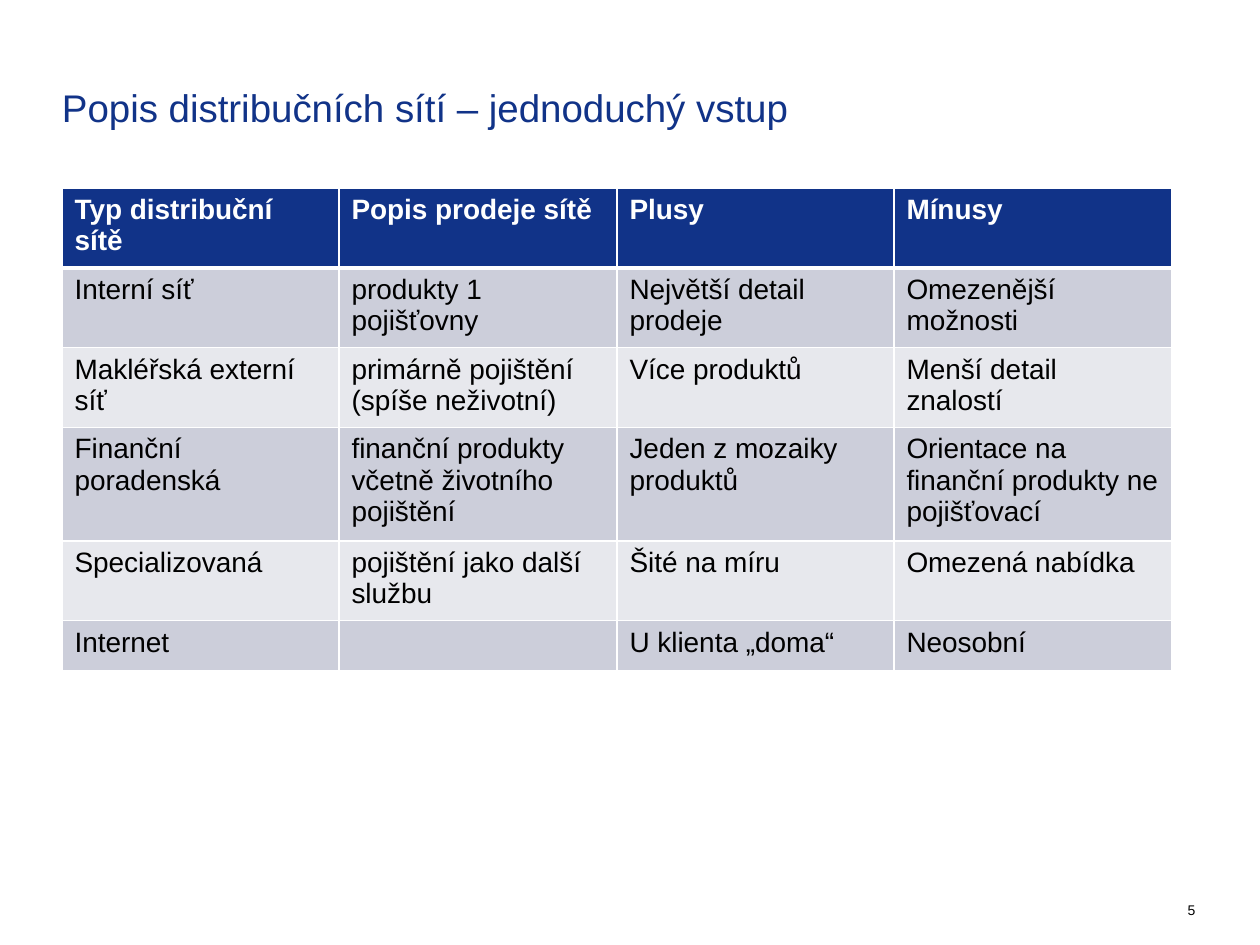
from dataclasses import dataclass

from lxml.etree import SubElement
from pptx import Presentation
from pptx.dml.color import RGBColor
from pptx.enum.text import PP_ALIGN
from pptx.oxml.ns import qn
from pptx.util import Pt

EMU_PER_PX = 914400 // 126
NAVY, WHITE, BLACK = "113388", "FFFFFF", "000000"
BANDS = ("CCCEDA", "E7E8ED")


@dataclass
class Area:
    left: int
    top: int
    width: int
    height: int

    def emu(self) -> list[int]:
        return [px(n) for n in (self.left, self.top, self.width, self.height)]


@dataclass
class Row:
    height: int
    texts: tuple[str, ...]


TITLE_AREA = Area(62, 84, 935, 47)
NUMBER_AREA = Area(1144, 895, 64, 53)
TABLE_AREA = Area(62, 188, 1110, 456)
COLUMN_WIDTHS = (277, 278, 277, 278)

ROWS = (
    Row(75, ("Typ distribuční sítě", "Popis prodeje sítě", "Plusy", "Mínusy")),
    Row(75, ("Interní síť", "produkty 1 pojišťovny",
             "Největší detail prodeje", "Omezenější možnosti")),
    Row(75, ("Makléřská externí síť", "primárně pojištění (spíše neživotní)",
             "Více produktů", "Menší detail znalostí")),
    Row(106, ("Finanční poradenská", "finanční produkty včetně životního pojištění",
              "Jeden z mozaiky produktů",
              "Orientace na finanční produkty ne pojišťovací")),
    Row(75, ("Specializovaná", "pojištění jako další službu",
             "Šité na míru", "Omezená nabídka")),
    Row(50, ("Internet", "", "U klienta „doma“", "Neosobní")),
)


def px(length: int) -> int:
    return length * EMU_PER_PX


def color(value: str) -> RGBColor:
    return RGBColor.from_string(value)


def write(frame, text: str, *, size: int, fill: str, bold: bool = False,
          align=PP_ALIGN.LEFT) -> None:
    frame.word_wrap = True
    para = frame.paragraphs[0]
    para.alignment = align
    span = para.add_run()
    span.text = text
    span.font.name = "Arial"
    span.font.size = Pt(size)
    span.font.bold = bold
    span.font.color.rgb = color(fill)


def add_border(cell, side: str, points: int) -> None:
    line = SubElement(cell._tc.get_or_add_tcPr(), qn(f"a:{side}"), w=str(Pt(points)))
    SubElement(SubElement(line, qn("a:solidFill")), qn("a:srgbClr"), val=WHITE)


def draw_cell(cell, text: str, row_number: int) -> None:
    header = row_number == 0
    # The rule under the header is heavier than the other borders
    heavy = {"lnB": 3} if header else {"lnT": 3} if row_number == 1 else {}
    for side in ("lnL", "lnR", "lnT", "lnB"):
        add_border(cell, side, heavy.get(side, 1))
    cell.fill.solid()
    cell.fill.fore_color.rgb = color(NAVY if header else BANDS[(row_number - 1) % 2])
    if text:
        write(cell.text_frame, text, size=16, bold=header,
              fill=WHITE if header else BLACK)


def draw_table(page) -> None:
    table = page.shapes.add_table(len(ROWS), len(COLUMN_WIDTHS),
                                  *TABLE_AREA.emu()).table
    for column, width in zip(table.columns, COLUMN_WIDTHS):
        column.width = px(width)
    for row_number, row in enumerate(ROWS):
        table.rows[row_number].height = px(row.height)
        for column_number, text in enumerate(row.texts):
            draw_cell(table.cell(row_number, column_number), text, row_number)


def main() -> None:
    deck = Presentation()
    deck.slide_width, deck.slide_height = px(1260), px(945)
    page = deck.slides.add_slide(deck.slide_layouts[6])

    # Title
    frame = page.shapes.add_textbox(*TITLE_AREA.emu()).text_frame
    frame.margin_left = frame.margin_right = 0
    frame.margin_top = frame.margin_bottom = 0
    write(frame, "Popis distribučních sítí – jednoduchý vstup", size=22, fill=NAVY)

    # Distribution networks
    draw_table(page)

    # Page number
    box = page.shapes.add_textbox(*NUMBER_AREA.emu())
    write(box.text_frame, "5", size=8, fill=BLACK, align=PP_ALIGN.RIGHT)

    deck.save("out.pptx")


if __name__ == "__main__":
    main()
